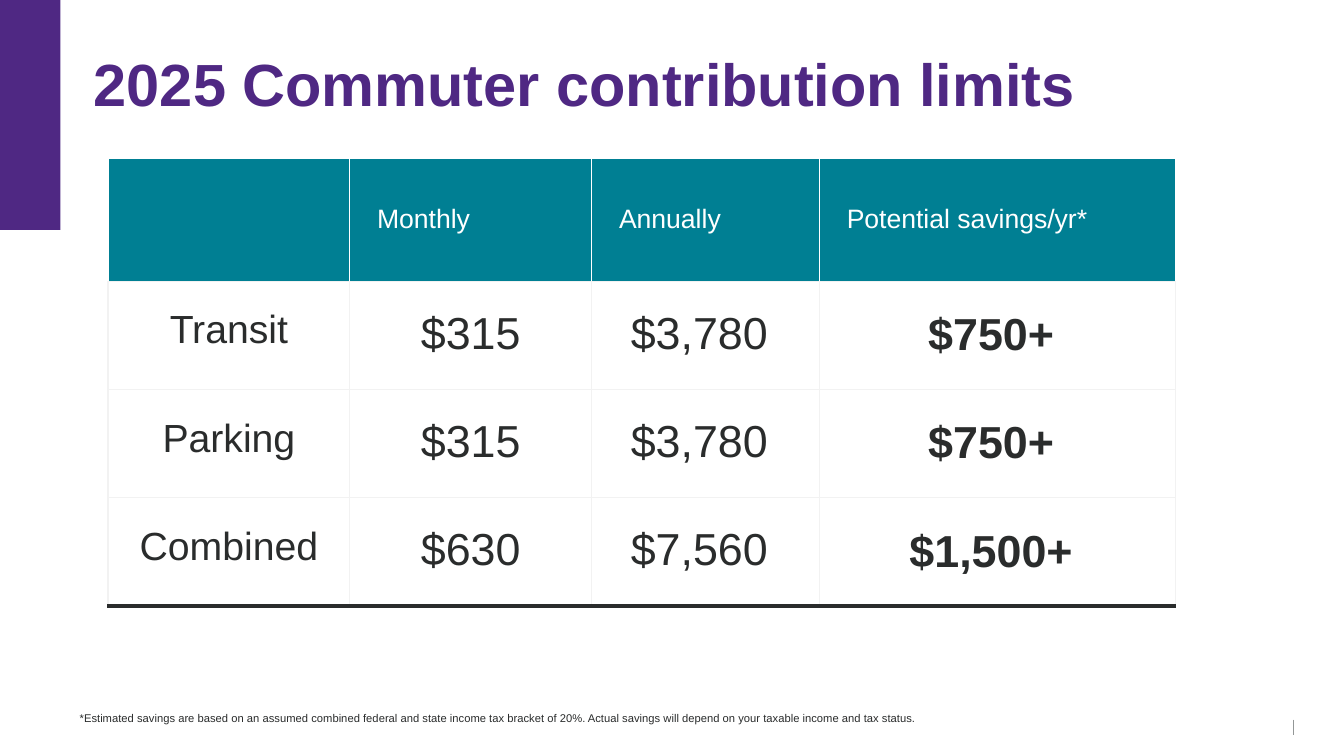
from dataclasses import dataclass

from lxml.etree import SubElement
from pptx import Presentation
from pptx.dml.color import RGBColor as RGB
from pptx.enum.shapes import MSO_CONNECTOR as CONN, MSO_SHAPE as SHAPE
from pptx.enum.text import MSO_ANCHOR as ANCHOR, PP_ALIGN as ALIGN
from pptx.oxml.ns import qn
from pptx.util import Inches, Pt

COLORS = {
    "purple": "4F2883",
    "teal": "007F93",
    "ink": "2A2C2C",
    "white": "FFFFFF",
    "rule": "F2F2F2",
    "gray": "939797",
}
FONT = "Arial"
W, H = Inches(13.33), Inches(7.5)
COLS = (18, 18, 16.95, 26.48)
ROWS = (16.27, 14.27, 14.27, 14.27)


@dataclass(frozen=True)
class Box:
    x: float
    y: float
    w: float
    h: float

    def place(self) -> tuple:
        return px(self.x), py(self.y), px(self.w), py(self.h)


@dataclass(frozen=True)
class ColumnStyle:
    size: float
    bold: bool = False
    anchor: ANCHOR = ANCHOR.TOP


BODY = (
    ColumnStyle(28),
    ColumnStyle(32),
    ColumnStyle(32),
    ColumnStyle(32, True, ANCHOR.MIDDLE),
)
LIMITS = (
    ("", "Monthly", "Annually", "Potential savings/yr*"),
    ("Transit", "$315", "$3,780 ", "$750+ "),
    ("Parking", "$315", "$3,780 ", "$750+ "),
    ("Combined", "$630", "$7,560 ", "$1,500+ "),
)


def px(percent: float) -> int:
    return round(W * percent / 100)


def py(percent: float) -> int:
    return round(H * percent / 100)


def rgb(name: str) -> RGB:
    return RGB.from_string(COLORS[name])


def write(tf, text: str, *, size: float, color: str, bold: bool = False,
          align=ALIGN.LEFT, spacing: float = 1.0, after: float = 0) -> None:
    p = tf.paragraphs[0]
    p.alignment = align
    p.line_spacing = spacing
    p.space_after = Pt(after)
    r = p.add_run()
    r.text = text
    r.font.name = FONT
    r.font.size = Pt(size)
    r.font.bold = bold
    r.font.color.rgb = rgb(color)


def add_text(slide, box: Box, text: str, **fmt) -> None:
    tf = slide.shapes.add_textbox(*box.place()).text_frame
    tf.word_wrap = True
    tf.margin_left = tf.margin_right = tf.margin_top = tf.margin_bottom = 0
    write(tf, text, **fmt)


def add_bar(slide, box: Box) -> None:
    sp = slide.shapes.add_shape(SHAPE.RECTANGLE, *box.place())
    sp.shadow.inherit = False
    sp.fill.solid()
    sp.fill.fore_color.rgb = rgb("purple")
    sp.line.fill.background()


def add_tick(slide, x: float, top: float, bottom: float) -> None:
    line = slide.shapes.add_connector(CONN.STRAIGHT, px(x), py(top), px(x), py(bottom))
    line.line.color.rgb = rgb("gray")
    line.line.width = Pt(1)
    SubElement(line._element.spPr, qn("a:effectLst"))


def set_border(cell, side: str, color: str, width: float) -> None:
    ln = SubElement(cell._tc.get_or_add_tcPr(), qn(f"a:ln{side}"), w=str(Pt(width)))
    fill = SubElement(ln, qn("a:solidFill"))
    SubElement(fill, qn("a:srgbClr"), val=COLORS[color])


def style_cell(cell, header: bool, last: bool) -> None:
    cell.margin_left = cell.margin_right = px(2.03)
    cell.margin_top = cell.margin_bottom = py(3.6)
    for side in "LRT":
        set_border(cell, side, "white" if header else "rule", 1)
    set_border(cell, "B", "ink" if last else "rule", 3 if last else 1)
    if header:
        cell.fill.solid()
        cell.fill.fore_color.rgb = rgb("teal")
    else:
        cell.fill.background()


def add_limits(slide, x: float, y: float) -> None:
    box = Box(x, y, sum(COLS), sum(ROWS))
    table = slide.shapes.add_table(len(ROWS), len(COLS), *box.place()).table
    table.first_row = table.horz_banding = False
    for col, width in zip(table.columns, COLS):
        col.width = px(width)
    for i, (row, height, texts) in enumerate(zip(table.rows, ROWS, LIMITS)):
        row.height = py(height)
        header = i == 0
        for cell, text, style in zip(row.cells, texts, BODY):
            style_cell(cell, header, i == len(ROWS) - 1)
            cell.vertical_anchor = ANCHOR.MIDDLE if header else style.anchor
            if header and text:
                write(cell.text_frame, text, size=19, color="white")
            elif text:
                write(cell.text_frame, text, size=style.size, color="ink",
                      bold=style.bold, align=ALIGN.CENTER)


def main() -> None:
    prs = Presentation()
    prs.slide_width, prs.slide_height = W, H
    slide = prs.slides.add_slide(prs.slide_layouts[6])
    add_tick(slide, 96.25, 95.2, 97.2)
    add_bar(slide, Box(0, 0, 4.5, 30.4))
    add_text(slide, Box(6.98, 5.33, 88.9, 9.87), "2025 Commuter contribution limits",
             size=42.5, color="purple", bold=True, spacing=1.1)
    add_limits(slide, 8.03, 20.93)
    add_text(slide, Box(5.93, 93.6, 88.15, 2.13),
             "*Estimated savings are based on an assumed combined federal and state "
             "income tax bracket of 20%. Actual savings will depend on your taxable "
             "income and tax status.",
             size=8, color="ink", spacing=1.3, after=8)
    prs.save("out.pptx")


if __name__ == "__main__":
    main()
